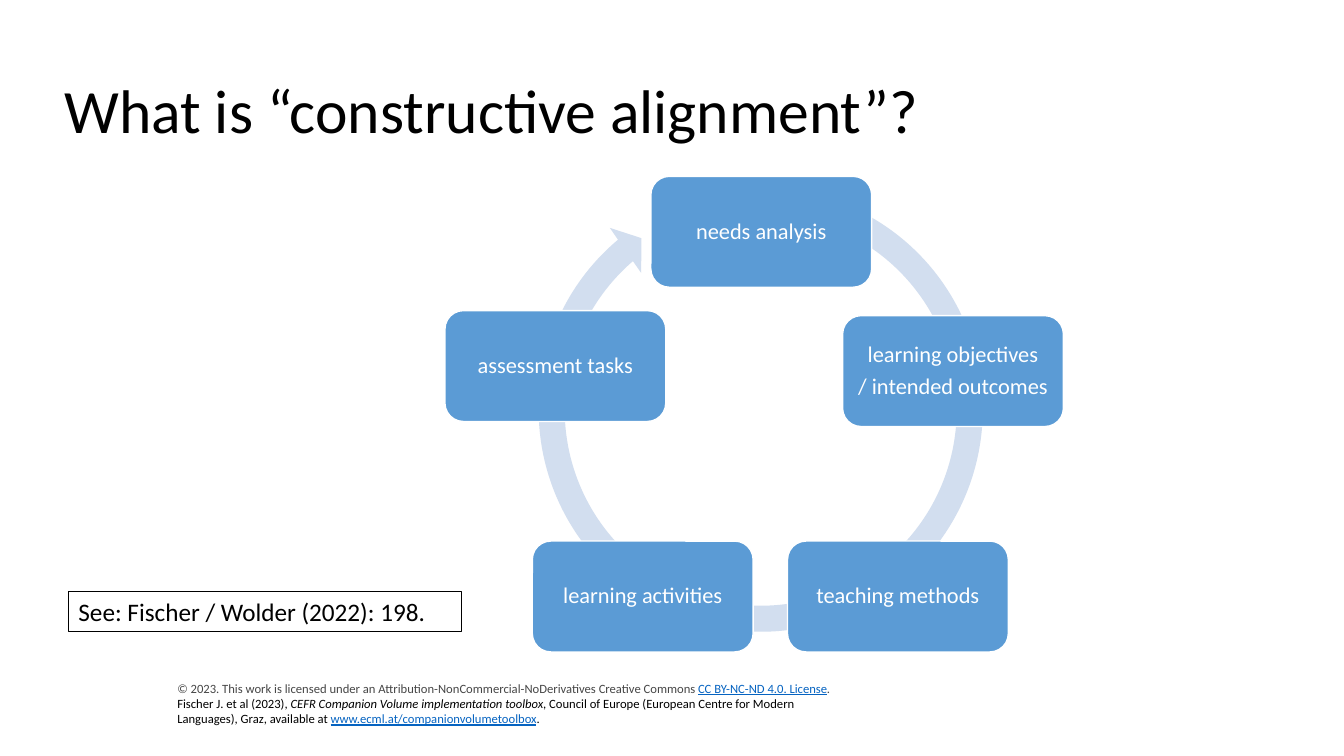
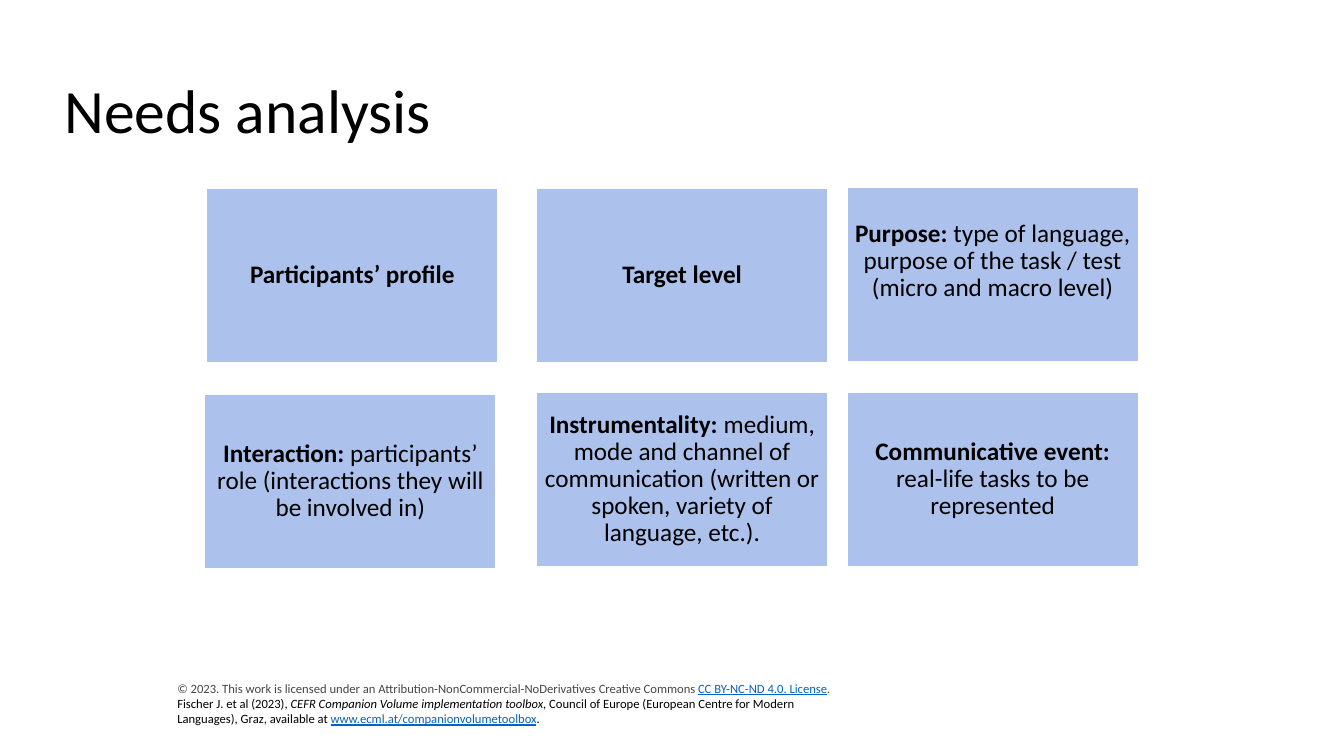
from math import cos, radians, sin

from pptx import Presentation
from pptx.dml.color import RGBColor
from pptx.enum.shapes import MSO_SHAPE
from pptx.enum.text import MSO_ANCHOR, PP_ALIGN
from pptx.util import Inches, Pt

CENTER, LEFT = PP_ALIGN.CENTER, PP_ALIGN.LEFT
MIDDLE = MSO_ANCHOR.MIDDLE
RECTANGLE, ROUNDED = MSO_SHAPE.RECTANGLE, MSO_SHAPE.ROUNDED_RECTANGLE
CIRCULAR_ARROW = MSO_SHAPE.CIRCULAR_ARROW

FONT = "Calibri"
COLORS = {
    "black": "000000",
    "white": "FFFFFF",
    "gray": "464646",
    "link": "0563C1",
    "ring": "D2DEEF",
    "step": "5B9BD5",
    "card": "ACC2EC",
}

# A run is (text, color, styles); styles combine "b", "i" and "u".
FOOTER = [
    [
        ("© 2023. This work is licensed under an Attribution-NonCommercial-NoDerivatives "
         "Creative Commons ", "gray", ""),
        ("CC BY-NC-ND 4.0. License", "link", "u"),
        (".", "gray", "i"),
    ],
    [
        ("Fischer J. et al (2023), ", "black", ""),
        ("CEFR Companion Volume implementation toolbox", "black", "i"),
        (", Council of Europe (European Centre for Modern Languages), Graz, available at ",
         "black", ""),
        ("www.ecml.at/companionvolumetoolbox", "link", "u"),
        (".", "black", ""),
    ],
]

CYCLE_TITLE = "What is “constructive alignment”?"
# Lines of each step, then its shift from the even place on the circle
STEPS = [
    (["needs analysis"], (0, 0)),
    (["learning objectives", "/ intended outcomes"], (0, 0)),
    (["teaching methods"], (0.18, 0)),
    (["learning activities"], (0, 0)),
    (["assessment tasks"], (-0.14, -0.05)),
]
CYCLE_CENTER, CYCLE_RADIUS = (7.55, 4.3), 2
STEP_SIZE = (2.19, 1.1)
RING_BOX = (5.2, 1.72, 4.69, 4.69)
RING_ADJUSTMENTS = (0.055, 3.307, 137.814, 173.827, 0.058)
SOURCE_NOTE = "See: Fischer / Wolder (2022): 198."

NEEDS_TITLE = "Needs analysis"
# Heading, detail, shift from the grid place, lift of the text
CARDS = [
    [
        ("Participants’ profile", "", (0, 0), 0),
        ("Target level", "", (0, 0), 0),
        ("Purpose: ", "type of language, purpose of the task / test (micro and macro level)",
         (0, -0.01), 0.13),
    ],
    [
        ("Interaction: ", "participants’ role (interactions they will be involved in)",
         (-0.02, 0.02), 0),
        ("Instrumentality: ", "medium, mode and channel of communication (written or spoken, "
         "variety of language, etc.).", (0, 0), 0),
        ("Communicative event: ", "real-life tasks to be represented", (0, 0), 0),
    ],
]
CARD_COLUMNS, CARD_ROWS = (2.05, 5.32, 8.4), (1.87, 3.89)
CARD_SIZE = (2.89, 1.73)
INSET = 0.07


def color(name):
    return RGBColor.from_string(COLORS[name])


def write(shape, paragraphs, size, align=LEFT, line_spacing=None, space_after=0):
    frame = shape.text_frame
    frame.word_wrap = True
    frame.vertical_anchor = MIDDLE
    for index, runs in enumerate(paragraphs):
        paragraph = frame.paragraphs[0] if index == 0 else frame.add_paragraph()
        paragraph.alignment = align
        paragraph.line_spacing = line_spacing
        paragraph.space_after = Pt(space_after)
        for text, color_name, styles in runs:
            run = paragraph.add_run()
            run.text = text
            font = run.font
            font.name, font.size = FONT, Pt(size)
            font.color.rgb = color(color_name)
            font.bold, font.italic = "b" in styles, "i" in styles
            font.underline = "u" in styles


def add_text(slide, box, paragraphs, size, **layout):
    write(slide.shapes.add_textbox(*map(Inches, box)), paragraphs, size, **layout)


def add_shape(slide, kind, box, fill, line=None, line_width=1):
    shape = slide.shapes.add_shape(kind, *map(Inches, box))
    shape.shadow.inherit = False
    shape.fill.solid()
    shape.fill.fore_color.rgb = color(fill)
    if line:
        shape.line.color.rgb = color(line)
        shape.line.width = Pt(line_width)
    else:
        shape.line.fill.background()
    return shape


def add_diagram_box(slide, kind, box, fill, paragraphs, size, lift=0):
    """Add a white-edged box with centred text, moved up by lift inches."""
    shape = add_shape(slide, kind, box, fill, "white")
    frame = shape.text_frame
    frame.margin_left = frame.margin_right = frame.margin_top = Inches(INSET)
    frame.margin_bottom = Inches(INSET + 2 * lift)
    write(shape, paragraphs, size, CENTER, 0.9, round(0.35 * size, 1))


def add_slide(presentation, title):
    """Add a blank slide with the shared footer and title."""
    slide = presentation.slides.add_slide(presentation.slide_layouts[6])
    add_text(slide, (1.66, 6.7, 6.85, 0.56), FOOTER, 9)
    add_text(slide, (0.54, 0.4, 12.27, 1.45), [[(title, "black", "")]], 44, line_spacing=0.9)
    return slide


def add_cycle_slide(presentation):
    slide = add_slide(presentation, CYCLE_TITLE)
    ring = add_shape(slide, CIRCULAR_ARROW, RING_BOX, "ring")
    for index, value in enumerate(RING_ADJUSTMENTS):
        ring.adjustments[index] = value
    width, height = STEP_SIZE
    for index, (lines, (shift_x, shift_y)) in enumerate(STEPS):
        angle = radians(360 / len(STEPS) * index)
        left = CYCLE_CENTER[0] + CYCLE_RADIUS * sin(angle) - width / 2 + shift_x
        top = CYCLE_CENTER[1] - CYCLE_RADIUS * cos(angle) - height / 2 + shift_y
        paragraphs = [[(line, "white", "")] for line in lines]
        add_diagram_box(slide, ROUNDED, (left, top, width, height), "step", paragraphs, 16)
    note = add_shape(slide, RECTANGLE, (0.68, 5.87, 3.9, 0.4), "white", "black", 0.75)
    write(note, [[(SOURCE_NOTE, "black", "")]], 18)


def add_needs_slide(presentation):
    slide = add_slide(presentation, NEEDS_TITLE)
    for top, cards in zip(CARD_ROWS, CARDS):
        for left, (heading, detail, (shift_x, shift_y), lift) in zip(CARD_COLUMNS, cards):
            runs = [(heading, "black", "b")]
            if detail:
                runs.append((detail, "black", ""))
            box = (left + shift_x, top + shift_y, *CARD_SIZE)
            add_diagram_box(slide, RECTANGLE, box, "card", [runs], 18, lift)


def main():
    presentation = Presentation()
    presentation.slide_width, presentation.slide_height = Inches(13.33), Inches(7.5)
    add_cycle_slide(presentation)
    add_needs_slide(presentation)
    presentation.save("out.pptx")


if __name__ == "__main__":
    main()
